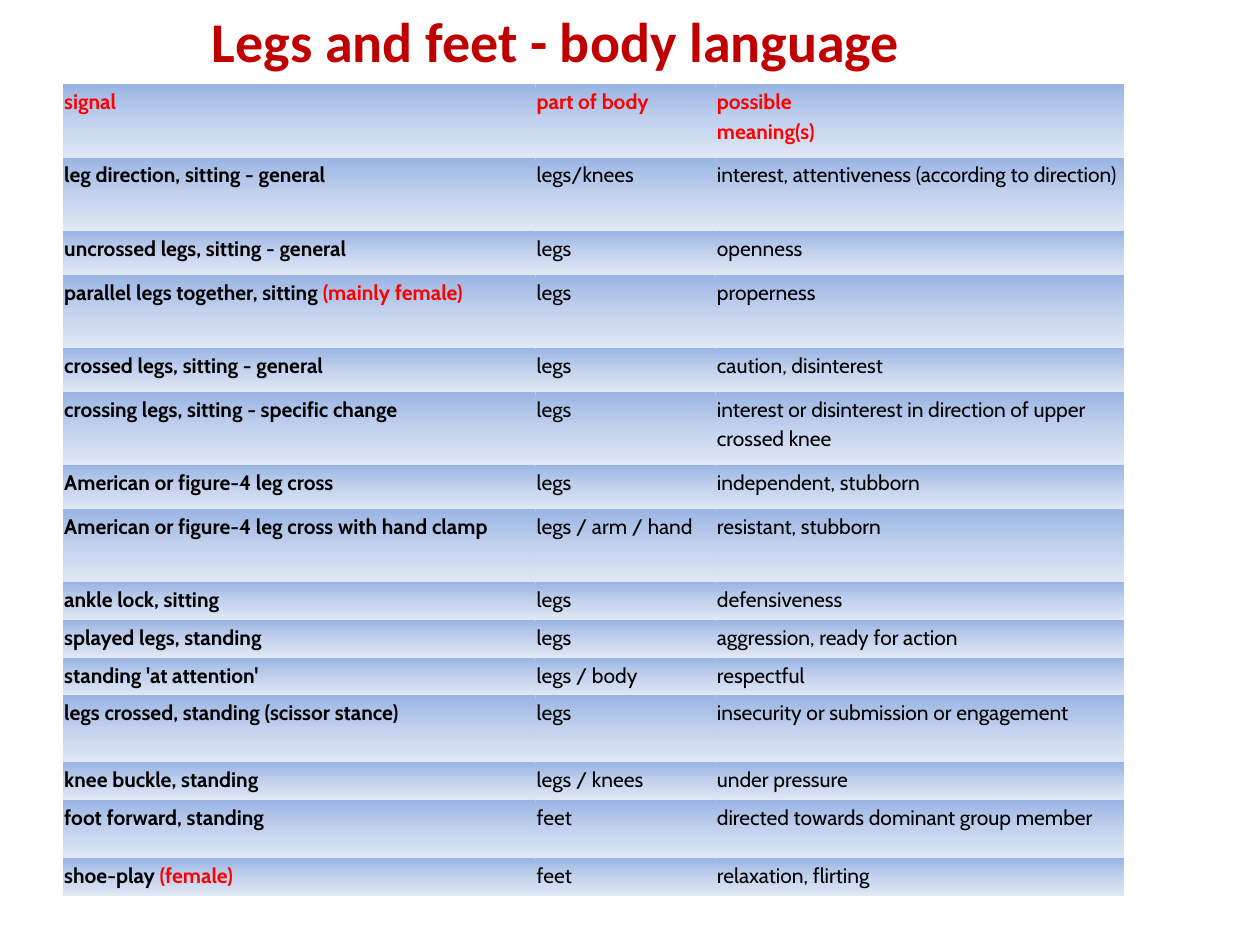
from lxml.etree import SubElement
from pptx import Presentation
from pptx.dml.color import RGBColor
from pptx.enum.text import MSO_ANCHOR, MSO_AUTO_SIZE, PP_ALIGN
from pptx.oxml.ns import qn
from pptx.util import Inches, Pt

TITLE = "Legs and feet - body language"
HEADER = ("signal", "part of body", "possible \vmeaning(s)")
# row height, signal, red remark after the signal, part of body, meaning
SIGNALS = [
    (0.58, "leg direction, sitting - general", "", "legs/knees",
     "interest, attentiveness (according to direction)"),
    (0.35, "uncrossed legs, sitting - general", "", "legs", "openness"),
    (0.58, "parallel legs together, sitting ", "(mainly female)", "legs", "properness"),
    (0.35, "crossed legs, sitting - general", "", "legs", "caution, disinterest"),
    (0.58, "crossing legs, sitting - specific change", "", "legs",
     "interest or disinterest in direction of upper crossed knee"),
    (0.35, "American or figure-4 leg cross", "", "legs", "independent, stubborn"),
    (0.58, "American or figure-4 leg cross with hand clamp", "", "legs / arm / hand",
     "resistant, stubborn"),
    (0.3, "ankle lock, sitting", "", "legs", "defensiveness"),
    (0.3, "splayed legs, standing", "", "legs", "aggression, ready for action"),
    (0.3, "standing 'at attention'", "", "legs / body", "respectful"),
    (0.53, "legs crossed, standing (scissor stance)", "", "legs",
     "insecurity or submission or engagement"),
    (0.3, "knee buckle, standing", "", "legs / knees", "under pressure"),
    (0.46, "foot forward, standing", "", "feet", "directed towards dominant group member"),
    (0.3, "shoe-play ", "(female)", "feet", "relaxation, flirting"),
]
HEADER_HEIGHT = 0.58
COLUMN_WIDTHS = (3.75, 1.43, 3.24)
CELL_MARGIN = Inches(0.01)

DARK_RED = RGBColor(0xC0, 0x00, 0x00)
RED = RGBColor(0xFF, 0x00, 0x00)
BLACK = RGBColor(0x00, 0x00, 0x00)
GRADIENT = (
    (0, RGBColor(0x9A, 0xB5, 0xE4)),
    (50, RGBColor(0xC2, 0xD1, 0xED)),
    (100, RGBColor(0xE1, 0xE8, 0xF5)),
)
NO_STYLE_NO_GRID = "{2D5ABB26-0587-4C30-8999-92F81FD0307C}"


def fill_with_gradient(cell):
    """Shade a cell from top to bottom; three stops need XML."""
    properties = cell._tc.get_or_add_tcPr()
    gradient = SubElement(properties, qn("a:gradFill"), rotWithShape="1")
    stops = SubElement(gradient, qn("a:gsLst"))
    for percent, color in GRADIENT:
        stop = SubElement(stops, qn("a:gs"), pos=str(percent * 1000))
        SubElement(stop, qn("a:srgbClr"), val=str(color))
    SubElement(gradient, qn("a:lin"), ang="5400000", scaled="0")


def write_cell(cell, text, color, bold, remark=""):
    cell.margin_left = cell.margin_right = CELL_MARGIN
    cell.margin_top = cell.margin_bottom = CELL_MARGIN
    fill_with_gradient(cell)
    paragraph = cell.text_frame.paragraphs[0]
    paragraph.text = text
    paragraph.line_spacing = 1.15
    font = paragraph.font
    font.name, font.size, font.bold = "Cabin", Pt(12), bold
    font.color.rgb = color
    if remark:
        run = paragraph.add_run()
        run.text = remark
        run.font.color.rgb = RED


def add_title(slide):
    title = slide.shapes.title
    title.left, title.top = Inches(1.58), Inches(0)
    title.width, title.height = Inches(5.92), Inches(0.64)
    frame = title.text_frame
    frame.word_wrap = True
    frame.auto_size = MSO_AUTO_SIZE.SHAPE_TO_FIT_TEXT
    frame.vertical_anchor = MSO_ANCHOR.TOP
    paragraph = frame.paragraphs[0]
    paragraph.text = TITLE
    paragraph.alignment = PP_ALIGN.LEFT
    font = paragraph.font
    font.name, font.size, font.bold = "Calibri", Pt(32), True
    font.color.rgb = DARK_RED


def add_signal_table(slide):
    heights = [HEADER_HEIGHT] + [signal[0] for signal in SIGNALS]
    frame = slide.shapes.add_table(
        len(heights), len(COLUMN_WIDTHS), Inches(0.5), Inches(0.67),
        Inches(sum(COLUMN_WIDTHS)), Inches(sum(heights)))
    table = frame.table
    table.first_row = table.horz_banding = False
    table._tbl.tblPr.find(qn("a:tableStyleId")).text = NO_STYLE_NO_GRID
    for column, width in zip(table.columns, COLUMN_WIDTHS):
        column.width = Inches(width)
    for row, height in zip(table.rows, heights):
        row.height = Inches(height)

    for column, heading in enumerate(HEADER):
        write_cell(table.cell(0, column), heading, RED, True)
    for row, (_, signal, remark, body_part, meaning) in enumerate(SIGNALS, start=1):
        write_cell(table.cell(row, 0), signal, BLACK, True, remark)
        write_cell(table.cell(row, 1), body_part, BLACK, False)
        write_cell(table.cell(row, 2), meaning, BLACK, False)


def main():
    presentation = Presentation()
    presentation.slide_width, presentation.slide_height = Inches(10), Inches(7.5)
    slide = presentation.slides.add_slide(presentation.slide_layouts[5])
    add_title(slide)
    add_signal_table(slide)
    presentation.save("out.pptx")


if __name__ == "__main__":
    main()
